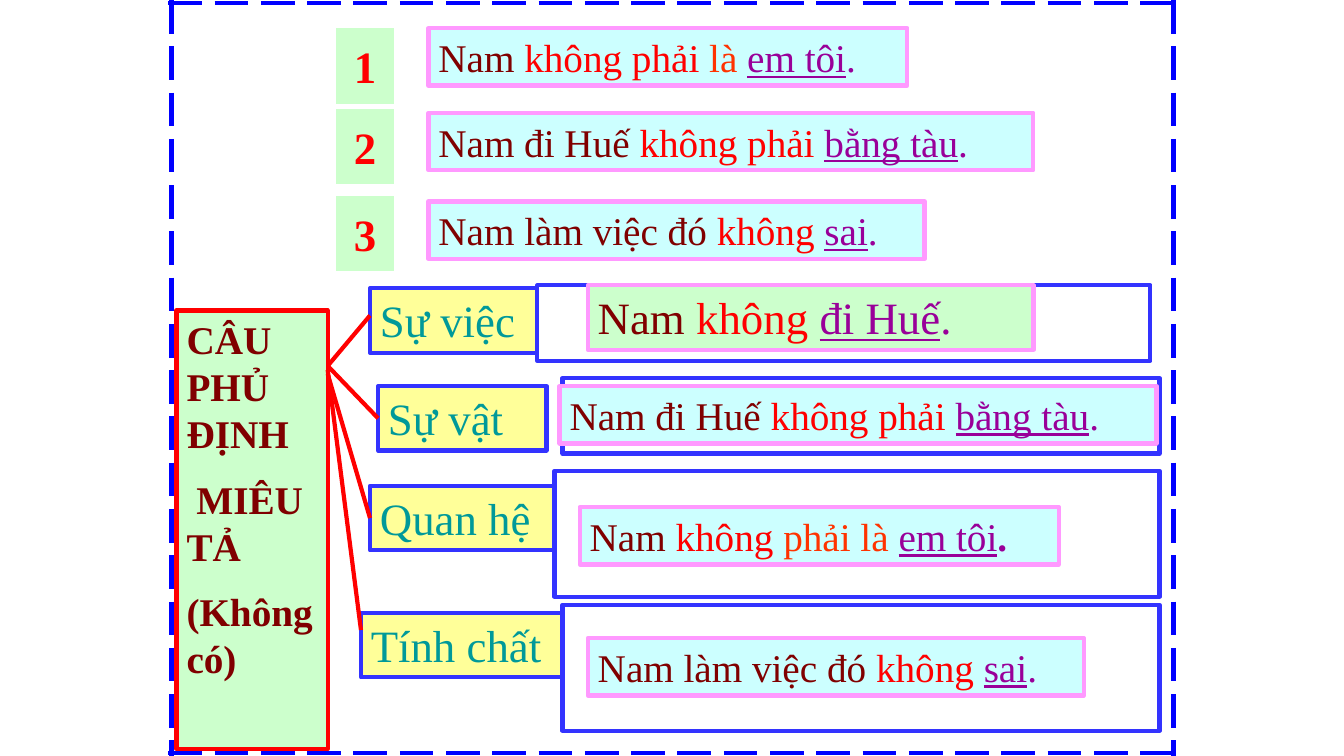
from dataclasses import dataclass
from typing import NamedTuple

import pptx
import pptx.dml.color
import pptx.enum.dml
import pptx.enum.shapes
import pptx.enum.text
import pptx.oxml
import pptx.util
from pptx.util import Inches

SHAPES = pptx.enum.shapes.MSO_SHAPE
ANCHOR = pptx.enum.text.MSO_ANCHOR
ALIGN = pptx.enum.text.PP_ALIGN


@dataclass(frozen=True)
class Theme:
    font: str = "Times New Roman"
    large: int = 32
    normal: int = 28
    stroke: int = 3
    paragraph_gap: int = 13
    maroon: str = "800000"
    red: str = "FF0000"
    orange: str = "FF3300"
    purple: str = "990099"
    teal: str = "009999"
    white: str = "FFFFFF"
    green: str = "CCFFCC"
    yellow: str = "FFFF99"
    cyan: str = "CCFFFF"
    pink: str = "FF99FF"
    blue: str = "3333FF"
    border: str = "0000FF"


T = Theme()


class Box(NamedTuple):
    left: float
    top: float
    width: float
    height: float


class Run(NamedTuple):
    text: str
    color: str
    underline: bool = False
    bold: bool = False


class Sentence(NamedTuple):
    box: Box
    runs: list[Run]
    fill: str = T.cyan
    size: int = T.normal


class Category(NamedTuple):
    name: str
    box: Box
    frame: Box
    start_y: float
    end_y: float | None  # None: joined to the middle of the label's left side


def rgb(color: str) -> pptx.dml.color.RGBColor:
    return pptx.dml.color.RGBColor.from_string(color)


def style_box(sp, fill: str, line: str | None) -> None:
    sp.fill.solid()
    sp.fill.fore_color.rgb = rgb(fill)
    if line is None:
        sp.line.fill.background()
    else:
        sp.line.color.rgb = rgb(line)
        sp.line.width = pptx.util.Pt(T.stroke)


def add_box(s, box: Box, fill: str, line: str | None, shape=SHAPES.RECTANGLE):
    sp = s.shapes.add_shape(shape, *map(Inches, box))
    sp.shadow.inherit = False
    style_box(sp, fill, line)
    return sp


def write(sp, paragraphs: list[list[Run]], size: int, align=ALIGN.LEFT,
          anchor=ANCHOR.TOP, wrap: bool = True) -> None:
    tf = sp.text_frame
    tf.word_wrap = wrap
    tf.vertical_anchor = anchor
    tf.auto_size = pptx.enum.text.MSO_AUTO_SIZE.NONE
    for i, runs in enumerate(paragraphs):
        p = tf.add_paragraph() if i else tf.paragraphs[0]
        p.alignment = align
        if i:
            p.space_before = pptx.util.Pt(T.paragraph_gap)
        for run in runs:
            r = p.add_run()
            r.text = run.text
            r.font.name = T.font
            r.font.size = pptx.util.Pt(size)
            r.font.bold = run.bold
            r.font.underline = run.underline
            r.font.color.rgb = rgb(run.color)


def add_line(s, x1: float, y1: float, x2: float, y2: float, color: str):
    line = s.shapes.add_connector(pptx.enum.shapes.MSO_CONNECTOR.STRAIGHT,
                                  *map(Inches, (x1, y1, x2, y2)))
    line.line.color.rgb = rgb(color)
    line.line.width = pptx.util.Pt(T.stroke)
    pptx.oxml.xmlchemy.OxmlElement  # effect list is appended after the line
    line._element.spPr.append(pptx.oxml.xmlchemy.OxmlElement("a:effectLst"))
    return line


# Sentences used in the examples and again beside their category
BY_TRAIN = [Run("Nam đi Huế ", T.maroon), Run("không phải ", T.red),
            Run("bằng tàu", T.purple, True), Run(".", T.purple)]
NOT_WRONG = [Run("Nam làm việc đó ", T.maroon), Run("không ", T.red),
             Run("sai", T.purple, True), Run(".", T.purple)]
SIBLING = [Run("Nam ", T.maroon), Run("không phải ", T.red), Run("là ", T.orange),
           Run("em tôi", T.purple, True), Run(".", T.purple)]
SIBLING_RELATION = [Run("Nam ", T.maroon), Run("không ", T.red), Run("phải là ", T.orange),
                    Run("em tôi", T.purple, True), Run(".", T.purple, bold=True)]
NOT_TO_HUE = [Run("Nam ", T.maroon), Run("không ", T.red),
              Run("đi Huế", T.purple, True), Run(".", T.purple)]

SENTENCES = [
    Sentence(Box(4.25, 0.28, 4.75, 0.57), SIBLING),
    Sentence(Box(4.25, 1.12, 6, 0.57), BY_TRAIN),
    Sentence(Box(4.25, 2, 4.92, 0.57), NOT_WRONG),
    Sentence(Box(5.83, 2.83, 4.42, 0.64), NOT_TO_HUE, T.green, T.large),
    Sentence(Box(5.55, 3.83, 5.92, 0.57), BY_TRAIN),
    Sentence(Box(5.75, 5.03, 4.75, 0.57), SIBLING_RELATION),
    Sentence(Box(5.83, 6.33, 4.92, 0.57), NOT_WRONG),
]
CATEGORIES = [
    Category("Sự việc", Box(3.67, 2.86, 1.67, 0.64), Box(5.33, 2.83, 6.08, 0.75), 3.63, 3.13),
    Category("Sự vật", Box(3.75, 3.83, 1.67, 0.64), Box(5.58, 3.75, 5.92, 0.75), 3.63, None),
    Category("Quan hệ", Box(3.67, 4.82, 2, 0.64), Box(5.5, 4.67, 6, 1.25), 3.71, None),
    Category("Tính chất", Box(3.58, 6.08, 2.17, 0.64), Box(5.58, 6, 5.92, 1.25), 3.67, 6.25),
]
NUMBER_TOPS = [0.28, 1.08, 1.94]
PANEL = Box(1.75, 3.08, 1.5, 4.35)
PANEL_TEXT = ["CÂU PHỦ ĐỊNH", " MIÊU TẢ", "(Không có)"]
BORDERS = [(1.7, 0, 1.7, 7.5), (11.64, 0, 11.64, 7.5),
           (1.67, 0.03, 11.67, 0.03), (1.67, 7.47, 11.67, 7.47)]


def main() -> None:
    prs = pptx.Presentation()
    prs.slide_width, prs.slide_height = Inches(13.33), Inches(7.5)
    s = prs.slides.add_slide(prs.slide_layouts[5])

    # Title panel on the left
    title = s.shapes.title
    title.left, title.top, title.width, title.height = map(Inches, PANEL)
    style_box(title, T.green, T.red)
    write(title, [[Run(text, T.maroon, bold=True)] for text in PANEL_TEXT], T.normal)

    # Category labels, their frames and the lines from the panel
    for category in CATEGORIES:
        label = add_box(s, category.box, T.yellow, T.blue)
        write(label, [[Run(category.name, T.teal)]], T.large)
        add_box(s, category.frame, T.white, T.blue)
        box = category.box
        end_y = category.end_y or box.top + box.height / 2
        branch = add_line(s, PANEL.left + PANEL.width, category.start_y, box.left, end_y, T.red)
        if category.end_y is None:
            branch.end_connect(label, 1)

    # Example sentences
    for sentence in SENTENCES:
        sp = add_box(s, sentence.box, sentence.fill, T.pink)
        write(sp, [sentence.runs], sentence.size)

    # Example numbers
    for number, top in enumerate(NUMBER_TOPS, 1):
        sp = add_box(s, Box(3.33, top, 0.58, 0.75), T.green, None,
                     SHAPES.ACTION_BUTTON_CUSTOM)
        write(sp, [[Run(str(number), T.red, bold=True)]], T.large,
              ALIGN.CENTER, ANCHOR.MIDDLE, wrap=False)

    # Dashed border
    for ends in BORDERS:
        border = add_line(s, *ends, T.border)
        border.line.dash_style = pptx.enum.dml.MSO_LINE.LONG_DASH

    prs.save("out.pptx")


if __name__ == "__main__":
    main()
